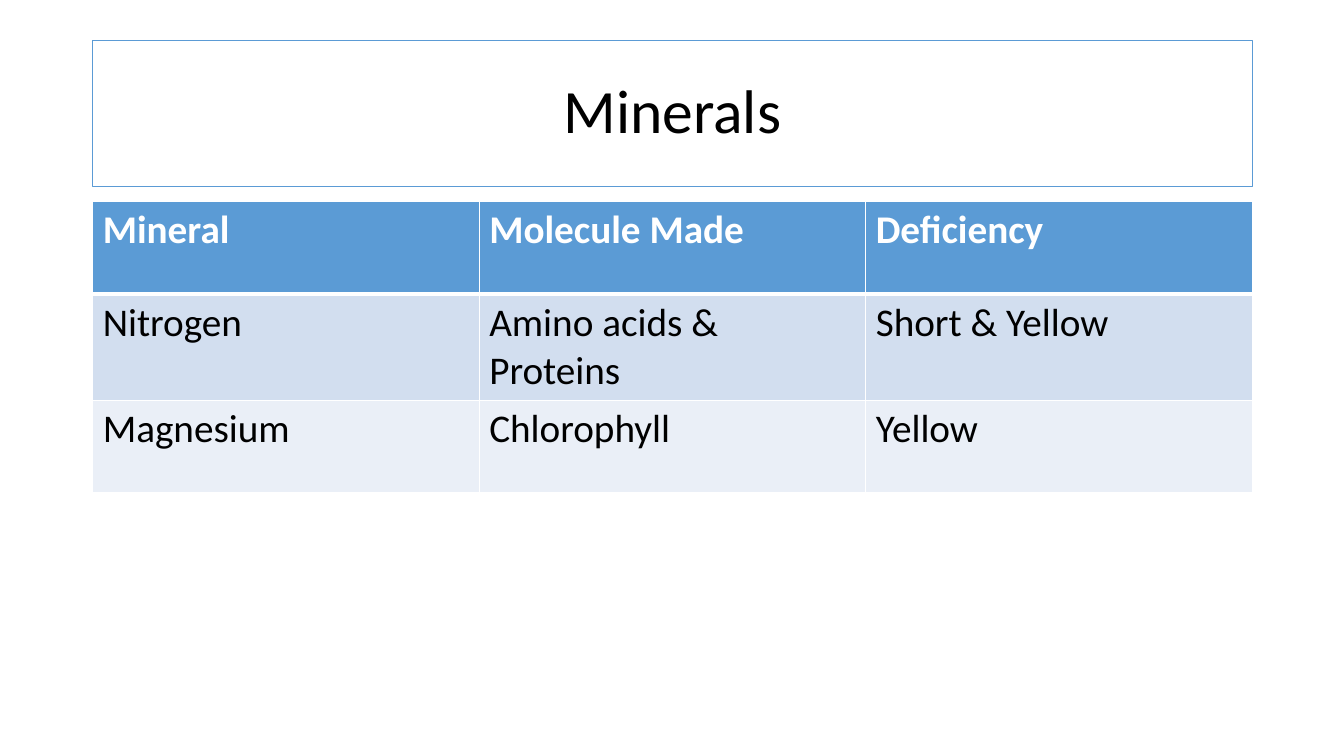
from dataclasses import dataclass

import lxml.etree
import pptx
import pptx.dml.color
import pptx.enum.shapes
import pptx.enum.text
import pptx.oxml.ns
import pptx.util

Inches = pptx.util.Inches
Pt = pptx.util.Pt
RGBColor = pptx.dml.color.RGBColor


@dataclass(frozen=True)
class Theme:
    font: str = "Calibri"
    title_size: int = 44
    table_size: int = 28
    accent: str = "5B9BD5"
    white: str = "FFFFFF"
    black: str = "000000"
    bands: tuple = ("D2DEEF", "EAEFF7")


theme = Theme()


def style_text(paragraph, size, color, bold=False):
    for run in paragraph.runs:
        run.font.name = theme.font
        run.font.size = Pt(size)
        run.font.bold = bold
        run.font.color.rgb = RGBColor.from_string(color)


def add_border(cell, side, width):
    """Draw a white line on one side (L, R, T or B) of a table cell."""
    qn = pptx.oxml.ns.qn
    properties = cell._tc.get_or_add_tcPr()
    line = lxml.etree.SubElement(properties, qn(f"a:ln{side}"), w=str(Pt(width)))
    fill = lxml.etree.SubElement(line, qn("a:solidFill"))
    lxml.etree.SubElement(fill, qn("a:srgbClr"), val=theme.white)


presentation = pptx.Presentation()
presentation.slide_width = Inches(13.33)
presentation.slide_height = Inches(7.5)
slide = presentation.slides.add_slide(presentation.slide_layouts[6])

left, width = Inches(0.92), Inches(11.5)

# Title
title = slide.shapes.add_shape(
    pptx.enum.shapes.MSO_SHAPE.RECTANGLE, left, Inches(0.4), width, Inches(1.45)
)
title.shadow.inherit = False
title.fill.background()
title.line.color.rgb = RGBColor.from_string(theme.accent)
title.line.width = Pt(0.75)
title.text_frame.text = "Minerals"
title.text_frame.word_wrap = True
title.text_frame.vertical_anchor = pptx.enum.text.MSO_ANCHOR.MIDDLE
paragraph = title.text_frame.paragraphs[0]
paragraph.alignment = pptx.enum.text.PP_ALIGN.CENTER
paragraph.line_spacing = 0.9
style_text(paragraph, theme.title_size, theme.black)

# Table of minerals
minerals = [
    ("Mineral", "Molecule Made", "Deficiency"),
    ("Nitrogen", "Amino acids & Proteins", "Short & Yellow"),
    ("Magnesium", "Chlorophyll", "Yellow"),
]
row_height = Inches(0.92)
table = slide.shapes.add_table(
    len(minerals), len(minerals[0]), left, Inches(2), width, row_height * len(minerals)
).table

for row_index, values in enumerate(minerals):
    table.rows[row_index].height = row_height
    is_header = row_index == 0
    fill_color = theme.accent if is_header else theme.bands[(row_index - 1) % 2]
    text_color = theme.white if is_header else theme.black
    top_width = 3 if row_index == 1 else 1
    bottom_width = 3 if is_header else 1
    for column_index, value in enumerate(values):
        cell = table.cell(row_index, column_index)
        cell.text_frame.text = value
        style_text(cell.text_frame.paragraphs[0], theme.table_size, text_color, is_header)
        for side, line_width in zip("LRTB", (1, 1, top_width, bottom_width)):
            add_border(cell, side, line_width)
        cell.fill.solid()
        cell.fill.fore_color.rgb = RGBColor.from_string(fill_color)

presentation.save("out.pptx")
